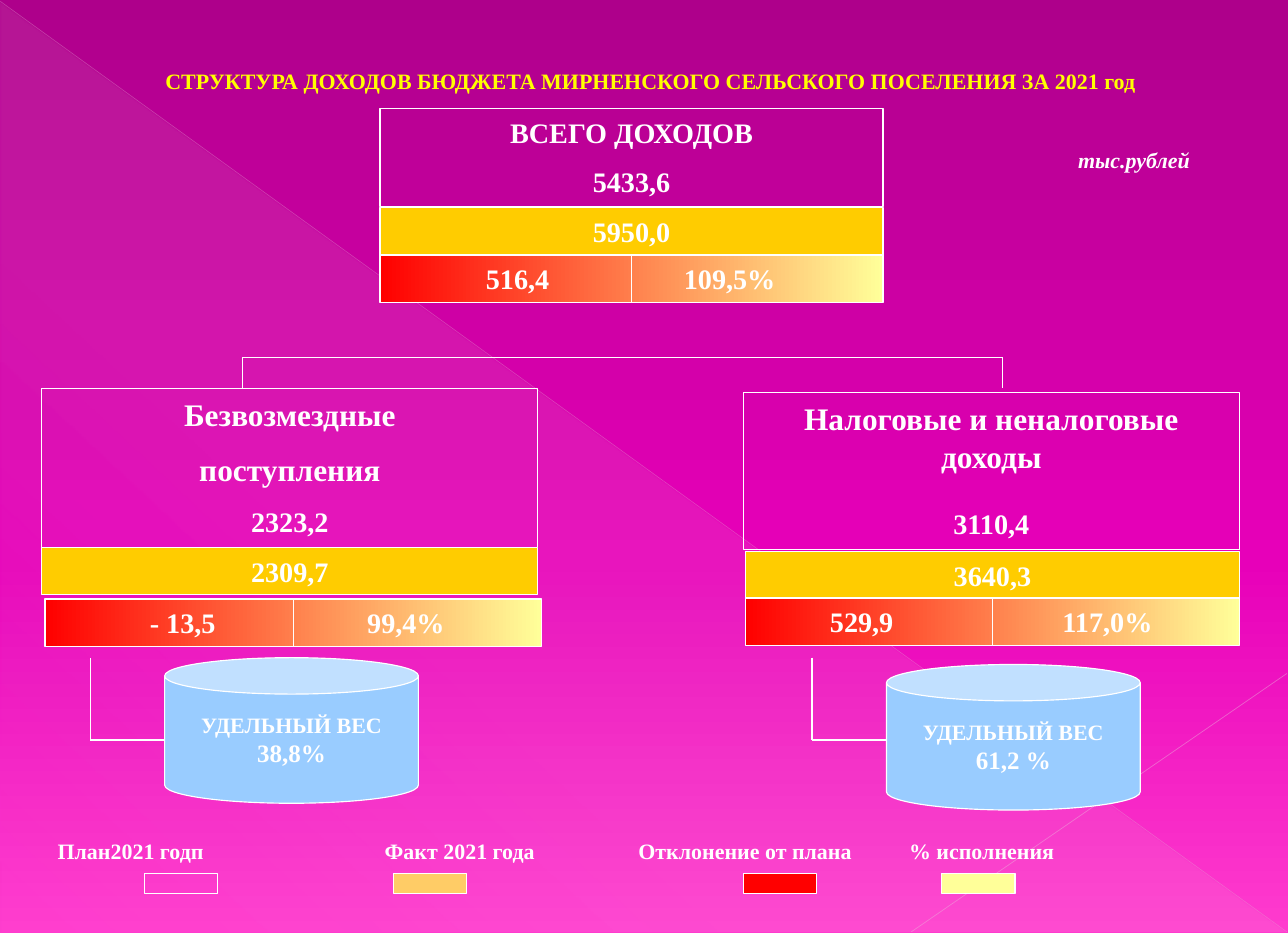
from dataclasses import dataclass
from typing import Any, Optional

from lxml import etree
from pptx import Presentation
from pptx import util as u
from pptx.dml.color import RGBColor
from pptx.enum import shapes, text
from pptx.oxml.ns import qn

PX = 9144  # EMU in one px, 100 px to the inch
KIND = shapes.MSO_SHAPE
ALIGN = text.PP_ALIGN


@dataclass(frozen=True)
class Theme:
    font: str = "Times New Roman"
    white: str = "FFFFFF"
    title: str = "FFFF00"
    fact: str = "FFCC00"
    mark: str = "FFCC66"
    red: str = "FF0000"
    pale: str = "FFFF99"
    can: str = "99CCFF"
    back: tuple = ((0, "AE008B", 100), (60, "E700B9", 100), (100, "FF3BCE", 100))
    band: tuple = ((0, "FF0000", 100), (100, "FFFF99", 100))
    sheen: tuple = ((0, "F4E7ED", 10), (70, "F4E7ED", 8), (100, "F4E7ED", 1))
    small: int = 14
    mid: int = 16
    large: int = 18
    head: int = 20
    line: float = 0.75


T = Theme()


@dataclass(frozen=True)
class Row:
    text: str
    size: int = T.large
    color: str = T.white
    gap: float = 0
    slant: bool = False
    align: Any = ALIGN.CENTER
    tabs: tuple = ()
    stop: str = "ctr"


@dataclass(frozen=True)
class Box:
    place: tuple[int, int, int, int]
    fill: Optional[str] = None
    rows: tuple[Row, ...] = ()
    kind: Any = KIND.RECTANGLE


@dataclass(frozen=True)
class Wire:
    ends: tuple[int, int, int, int]
    color: str = T.white
    width: float = T.line
    alpha: int = 100


def fade(color: Any, alpha: int) -> None:
    """Give a colour element its opacity in percent."""
    if alpha < 100:
        etree.SubElement(color, qn("a:alpha"), val=str(alpha * 1000))


def blend(owner: Any, fill: Any, stops: tuple, angle: int) -> None:
    """Fill with a linear gradient of (percent, colour, opacity) stops."""
    fill.gradient()
    group = owner.find(".//" + qn("a:gsLst"))
    for old in list(group):
        group.remove(old)
    for spot, color, alpha in stops:
        stop = etree.SubElement(group, qn("a:gs"), pos=str(spot * 1000))
        fade(etree.SubElement(stop, qn("a:srgbClr"), val=color), alpha)
    group.getnext().set("ang", str(angle * 60000))


def write(shape: Any, rows: tuple[Row, ...], wrap: bool = True, middle: bool = False) -> None:
    frame = shape.text_frame
    anchor = text.MSO_ANCHOR.MIDDLE if middle else text.MSO_ANCHOR.TOP
    looks = {"word_wrap": wrap, "auto_size": text.MSO_AUTO_SIZE.NONE, "vertical_anchor": anchor,
             "margin_left": 11 * PX, "margin_right": 11 * PX,
             "margin_top": 6 * PX, "margin_bottom": 6 * PX}
    for key, value in looks.items():
        setattr(frame, key, value)
    for index, row in enumerate(rows):
        para = frame.add_paragraph() if index else frame.paragraphs[0]
        para.alignment = row.align
        if row.gap:
            para.space_before = u.Pt(row.gap)
        if row.tabs:
            tabs = etree.SubElement(para._p.get_or_add_pPr(), qn("a:tabLst"))
            for spot in row.tabs:
                etree.SubElement(tabs, qn("a:tab"), pos=str(spot * PX), algn=row.stop)
        run = para.add_run()
        run.text = row.text
        font = {"name": T.font, "size": u.Pt(row.size), "bold": True, "italic": row.slant}
        for key, value in font.items():
            setattr(run.font, key, value)
        run.font.color.rgb = RGBColor.from_string(row.color)


def draw(slide: Any, box: Box) -> Any:
    shape = slide.shapes.add_shape(box.kind, *(n * PX for n in box.place))
    shape.shadow.inherit = False
    if box.fill:
        shape.fill.solid()
        shape.fill.fore_color.rgb = RGBColor.from_string(box.fill)
    else:
        shape.fill.background()
    shape.line.color.rgb = RGBColor.from_string(T.white)
    shape.line.width = u.Pt(T.line)
    is_can = box.kind == KIND.CAN
    if box.rows:
        write(shape, box.rows, wrap=not is_can, middle=is_can)
    return shape


def link(slide: Any, wire: Wire) -> Any:
    line = slide.shapes.add_connector(shapes.MSO_CONNECTOR.STRAIGHT, *(n * PX for n in wire.ends))
    line.line.color.rgb = RGBColor.from_string(wire.color)
    line.line.width = u.Pt(wire.width)
    fade(line.element.find(".//" + qn("a:srgbClr")), wire.alpha)
    etree.SubElement(line.element.spPr, qn("a:effectLst"))
    return line


def split(slide: Any, box: Box) -> None:
    """Draw a gradient band cut in two by a line down its middle."""
    band = draw(slide, box)
    blend(band.element, band.fill, T.band, 0)
    line = link(slide, Wire((0, 0, 0, 0)))
    line.begin_connect(band, 0)
    line.end_connect(band, 2)


def note(slide: Any, place: tuple[int, int, int, int], row: Row) -> None:
    write(slide.shapes.add_textbox(*(n * PX for n in place)), (row,))


def pair(left: str, right: str, *tabs: int) -> tuple[Row, ...]:
    return (Row(f"\t{left}\t{right}", align=ALIGN.LEFT, tabs=tabs),)


def share(value: str) -> tuple[Row, ...]:
    return Row("УДЕЛЬНЫЙ ВЕС", T.small), Row(value, T.mid)


BOXES = (
    Box((337, 96, 446, 87), rows=(Row("ВСЕГО ДОХОДОВ"), Row("5433,6", gap=10))),
    Box((337, 184, 446, 42), T.fact, (Row("5950,0"),)),
    Box((37, 344, 440, 141), rows=(Row("Безвозмездные", T.head),
                                   Row("поступления", T.head, gap=11.5), Row("2323,2", gap=10))),
    Box((37, 485, 440, 42), T.fact, (Row("2309,7"),)),
    Box((659, 348, 440, 139), rows=(Row("Налоговые и неналоговые доходы", T.head),
                                    Row("3110,4", gap=20))),
    Box((661, 489, 438, 42), T.fact, (Row("3640,3"),)),
    Box((146, 583, 225, 129), T.can, share("38,8%"), KIND.CAN),
    Box((786, 589, 225, 129), T.can, share("61,2 %"), KIND.CAN),
)
BANDS = (
    Box((337, 226, 446, 42), rows=pair("516,4", "109,5%", 111, 299)),
    Box((661, 530, 438, 42), rows=pair("529,9", "117,0%", 92, 310)),
    Box((40, 531, 440, 42), rows=pair("- 13,5", "99,4%", 111, 309)),
)
MARKS = ((128, None), (349, T.mark), (659, T.red), (835, T.pale))
WIRES = (
    Wire((215, 317, 889, 317)),
    *(Wire((x, 317, x, 344)) for x in (215, 889)),
    *(Wire((x, 583, x, 656)) for x in (80, 720)),
    *(Wire((x, 656, x + 66, 656)) for x in (80, 720)),
)
RAYS = (Wire((0, 1, 1141, 826), "E9A8D7", 0.39, 35), Wire((1141, 597, 808, 826), "EBB2DB", 0.47, 45))


def main() -> None:
    deck = Presentation()
    deck.slide_width, deck.slide_height = 1142 * PX, 827 * PX
    slide = deck.slides.add_slide(deck.slide_layouts[5])
    blend(slide.element, slide.background.fill, T.back, 90)

    sheen = draw(slide, Box((1, 2, 1140, 824), kind=KIND.RIGHT_TRIANGLE))
    blend(sheen.element, sheen.fill, T.sheen, 133)
    sheen.line.fill.background()
    for ray in RAYS:
        link(slide, ray)

    title = slide.shapes.title
    for key, value in {"left": 62, "top": 54, "width": 1030, "height": 35}.items():
        setattr(title, key, value * PX)
    write(title, (Row("СТРУКТУРА ДОХОДОВ БЮДЖЕТА МИРНЕНСКОГО СЕЛЬСКОГО ПОСЕЛЕНИЯ ЗА 2021 год",
                      T.small, T.title),))
    title.element.getparent().append(title.element)

    note(slide, (16, 736, 1072, 35),
         Row("\tПлан2021 годп\tФакт 2021 года\tОтклонение от плана\t% исполнения", T.small,
             align=ALIGN.LEFT, tabs=(24, 314, 539, 779), stop="l"))
    note(slide, (945, 124, 147, 35), Row("тыс.рублей", T.small, slant=True, align=ALIGN.LEFT))
    for box in BOXES:
        draw(slide, box)
    for left, fill in MARKS:
        draw(slide, Box((left, 774, 65, 18), fill))
    for wire in WIRES:
        link(slide, wire)
    for band in BANDS:
        split(slide, band)
    deck.save("out.pptx")


if __name__ == "__main__":
    main()
